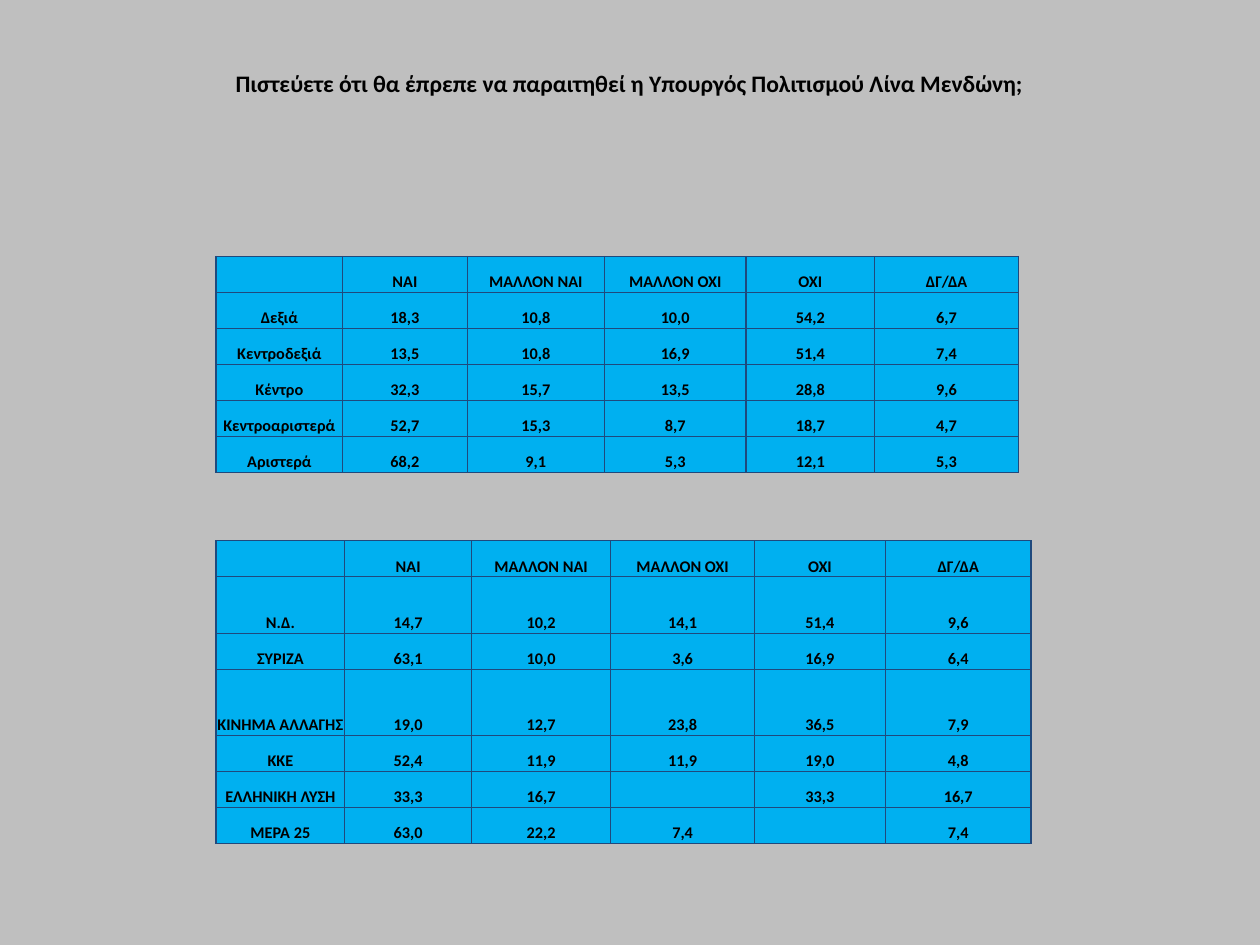
from dataclasses import dataclass

from lxml import etree
from pptx import Presentation
from pptx.dml.color import RGBColor
from pptx.enum.text import MSO_ANCHOR, PP_ALIGN
from pptx.oxml.ns import qn
from pptx.util import Pt

CENTER = PP_ALIGN.CENTER
MIDDLE, BOTTOM = MSO_ANCHOR.MIDDLE, MSO_ANCHOR.BOTTOM

GREY, BLUE, NAVY, BLACK = "BFBFBF", "00B0F0", "1F497D", "000000"
ROW_H = 24.36
HEADER = ["", "ΝΑΙ", "ΜΑΛΛΟΝ ΝΑΙ", "ΜΑΛΛΟΝ ΟΧΙ", "ΟΧΙ", "ΔΓ/ΔΑ"]


@dataclass
class PollTable:
    left: float
    top: float
    col_widths: list[float]
    row_heights: list[float]
    rows: list[list[str]]


BY_POSITION = PollTable(
    146.2, 173.5, [85.7, 84.2, 92.9, 95.8, 87.1, 97.2], [ROW_H] * 6,
    [
        HEADER,
        ["Δεξιά", "18,3", "10,8", "10,0", "54,2", "6,7"],
        ["Κεντροδεξιά", "13,5", "10,8", "16,9", "51,4", "7,4"],
        ["Κέντρο", "32,3", "15,7", "13,5", "28,8", "9,6"],
        ["Κεντροαριστερά", "52,7", "15,3", "8,7", "18,7", "4,7"],
        ["Αριστερά", "68,2", "9,1", "5,3", "12,1", "5,3"],
    ],
)
BY_PARTY = PollTable(
    146.2, 365.8, [87.1, 85.7, 94.3, 97.2, 88.6, 98.6],
    [ROW_H, 38.3, ROW_H, 44.8, ROW_H, ROW_H, ROW_H],
    [
        HEADER,
        ["Ν.Δ.", "14,7", "10,2", "14,1", "51,4", "9,6"],
        ["ΣΥΡΙΖΑ", "63,1", "10,0", "3,6", "16,9", "6,4"],
        ["ΚΙΝΗΜΑ ΑΛΛΑΓΗΣ", "19,0", "12,7", "23,8", "36,5", "7,9"],
        ["ΚΚΕ", "52,4", "11,9", "11,9", "19,0", "4,8"],
        ["ΕΛΛΗΝΙΚΗ ΛΥΣΗ", "33,3", "16,7", "", "33,3", "16,7"],
        ["ΜΕΡΑ 25", "63,0", "22,2", "7,4", "", "7,4"],
    ],
)


def set_fill(fill, color: str) -> None:
    fill.solid()
    fill.fore_color.rgb = RGBColor.from_string(color)


def write(tf, text: str, *, size: float, color: str = BLACK,
          bold: bool = True, font: str = "Calibri") -> None:
    p = tf.paragraphs[0]
    p.alignment = CENTER
    p.font.size = Pt(size)
    if not text:
        return
    r = p.add_run()
    r.text = text
    r.font.size = Pt(size)
    r.font.name = font
    r.font.bold = bold
    r.font.color.rgb = RGBColor.from_string(color)


def set_borders(cell, color: str, width: float) -> None:
    tc_pr = cell._tc.get_or_add_tcPr()
    for i, side in enumerate(("a:lnL", "a:lnR", "a:lnT", "a:lnB")):
        ln = etree.Element(qn(side), w=str(Pt(width)))
        fill = etree.SubElement(ln, qn("a:solidFill"))
        etree.SubElement(fill, qn("a:srgbClr"), val=color)
        tc_pr.insert(i, ln)


def add_poll_table(slide, poll: PollTable) -> None:
    frame = slide.shapes.add_table(
        len(poll.rows), len(poll.col_widths), Pt(poll.left), Pt(poll.top),
        Pt(sum(poll.col_widths)), Pt(sum(poll.row_heights)))
    table = frame.table
    table.first_row = table.horz_banding = False
    for col, width in zip(table.columns, poll.col_widths):
        col.width = Pt(width)
    for row, height, texts in zip(table.rows, poll.row_heights, poll.rows):
        row.height = Pt(height)
        for cell, text in zip(row.cells, texts):
            cell.margin_left = cell.margin_right = cell.margin_top = Pt(0.5)
            cell.margin_bottom = 0
            cell.vertical_anchor = BOTTOM
            set_fill(cell.fill, BLUE)
            set_borders(cell, NAVY, 1)
            write(cell.text_frame, text, size=11)


def main() -> None:
    prs = Presentation()
    prs.slide_width, prs.slide_height = Pt(852.5), Pt(639.4)
    slide = prs.slides.add_slide(prs.slide_layouts[5])
    set_fill(slide.background.fill, GREY)

    # Question
    title = slide.shapes.title
    title.left, title.top = Pt(58.3), Pt(33.8)
    title.width, title.height = Pt(735.1), Pt(44.6)
    tf = title.text_frame
    tf.word_wrap = True
    tf.vertical_anchor = MIDDLE
    tf.margin_left = tf.margin_right = Pt(8.6)
    tf.margin_top = tf.margin_bottom = Pt(4.3)
    write(tf, "Πιστεύετε ότι θα έπρεπε να παραιτηθεί η Υπουργός Πολιτισμού "
              "Λίνα Μενδώνη;", size=16)

    # Answers by political position and by party
    for poll in (BY_POSITION, BY_PARTY):
        add_poll_table(slide, poll)

    prs.save("out.pptx")


if __name__ == "__main__":
    main()
